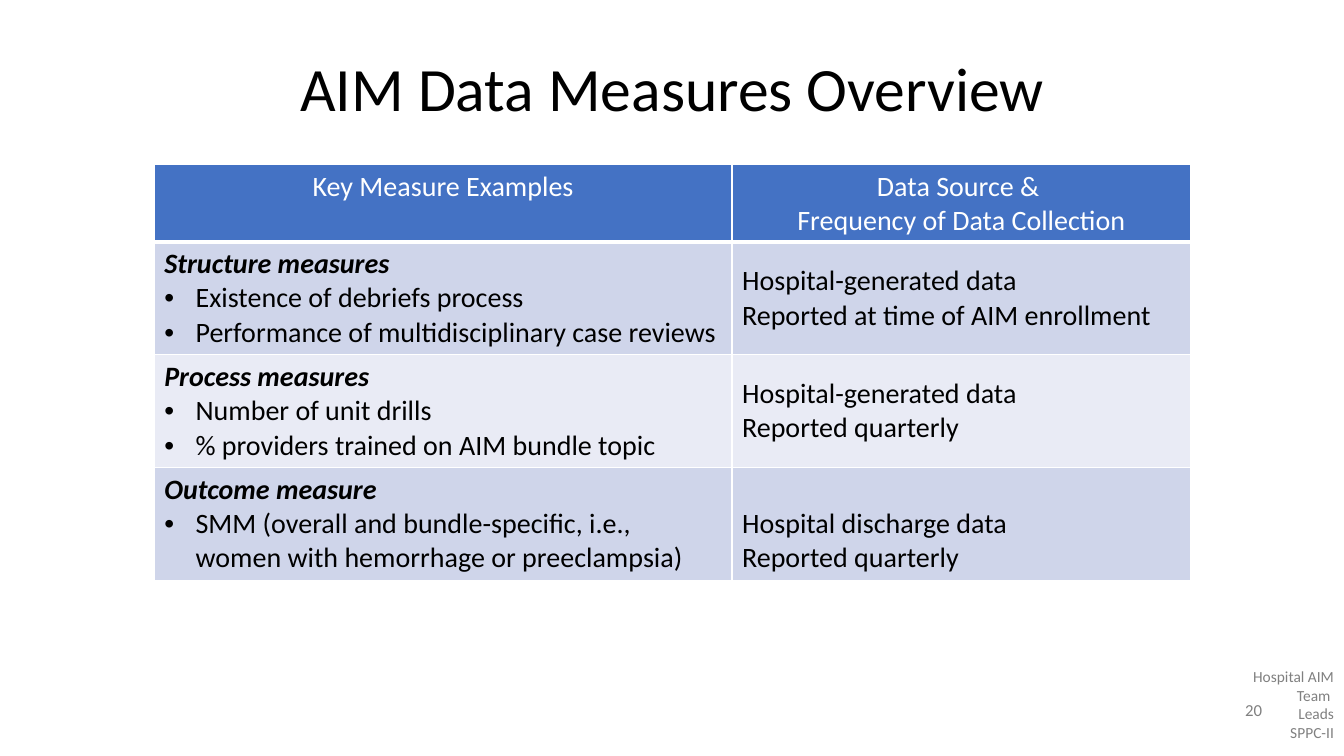
from pptx import Presentation
from pptx.dml.color import RGBColor
from pptx.enum.text import MSO_ANCHOR as Anchor, MSO_AUTO_SIZE as AutoSize, PP_ALIGN as Align
from pptx.oxml import parse_xml
from pptx.oxml.ns import nsdecls
from pptx.util import Inches, Pt

COLORS = {
    "black": "000000", "white": "FFFFFF", "gray": "808080",
    "header": "4472C4", "band_dark": "CFD5EA", "band_light": "E9EBF5",
}
FONT = "Calibri"
TITLE_ONLY = 5

HEADERS = [["Key Measure Examples"], ["Data Source & ", "Frequency of Data Collection"]]
MEASURES = [
    ("Structure measures",
     ["Existence of debriefs process", "Performance of multidisciplinary case reviews"],
     ["Hospital-generated data", "Reported at time of AIM enrollment"], Anchor.MIDDLE),
    ("Process measures",
     ["Number of unit drills", "% providers trained on AIM bundle topic"],
     ["Hospital-generated data", "Reported quarterly"], Anchor.MIDDLE),
    ("Outcome measure",
     ["SMM (overall and bundle-specific, i.e., women with hemorrhage or preeclampsia)"],
     ["Hospital discharge data", "Reported quarterly"], Anchor.BOTTOM),
]


def rgb(name):
    return RGBColor.from_string(COLORS[name])


def add_bullet(paragraph, indent=0.31):
    properties = paragraph._p.get_or_add_pPr()
    properties.set("marL", str(Inches(indent)))
    properties.set("indent", str(-Inches(indent)))
    properties.append(parse_xml(f'<a:buFont {nsdecls("a")} typeface="Arial"/>'))
    properties.append(parse_xml(f'<a:buChar {nsdecls("a")} char="•"/>'))


def write(frame, lines, size=20, color="black", align=Align.LEFT, spacing=None,
          heading=False, bullets=False):
    """Fill a text frame; heading makes line one bold italic, bullets mark the rest."""
    for number, line in enumerate(lines):
        paragraph = frame.paragraphs[0] if number == 0 else frame.add_paragraph()
        paragraph.alignment = align
        if spacing:
            paragraph.line_spacing = spacing
        if bullets and number > 0:
            add_bullet(paragraph)
        run = paragraph.add_run()
        run.text = line
        font = run.font
        font.name, font.size = FONT, Pt(size)
        font.color.rgb = rgb(color)
        font.bold = font.italic = heading and number == 0


def add_borders(cell, top=1, bottom=1):
    properties = cell._tc.get_or_add_tcPr()
    for side, width in {"L": 1, "R": 1, "T": top, "B": bottom}.items():
        properties.append(parse_xml(
            f'<a:ln{side} {nsdecls("a")} w="{Pt(width)}"><a:solidFill>'
            f'<a:srgbClr val="{COLORS["white"]}"/></a:solidFill></a:ln{side}>'))


class SlideBuilder:
    def __init__(self, presentation):
        self.slide = presentation.slides.add_slide(presentation.slide_layouts[TITLE_ONLY])
        background = self.slide.background.fill
        background.solid()
        background.fore_color.rgb = rgb("white")

    def title(self, text, left, top, width, height):
        title = self.slide.shapes.title
        title.left, title.top = Inches(left), Inches(top)
        title.width, title.height = Inches(width), Inches(height)
        title.text_frame.auto_size = AutoSize.NONE
        title.text_frame.vertical_anchor = Anchor.MIDDLE
        write(title.text_frame, [text], size=44, align=Align.CENTER, spacing=0.9)

    def text(self, lines, left, top, width, height, anchor=Anchor.TOP, **style):
        frame = self.slide.shapes.add_textbox(
            Inches(left), Inches(top), Inches(width), Inches(height)).text_frame
        frame.word_wrap = True
        frame.vertical_anchor = anchor
        write(frame, lines, **style)

    def table(self, left, top, widths, heights):
        table = self.slide.shapes.add_table(
            len(heights), len(widths), Inches(left), Inches(top),
            Inches(sum(widths)), Inches(sum(heights))).table
        table.first_row = table.horz_banding = False
        for column, width in zip(table.columns, widths):
            column.width = Inches(width)
        for row, height in zip(table.rows, heights):
            row.height = Inches(height)
        return table

    def cell(self, cell, lines, fill, anchor=Anchor.TOP, top=1, bottom=1, **style):
        add_borders(cell, top, bottom)
        cell.fill.solid()
        cell.fill.fore_color.rgb = rgb(fill)
        cell.vertical_anchor = anchor
        write(cell.text_frame, lines, **style)


def main():
    presentation = Presentation()
    presentation.slide_width, presentation.slide_height = Inches(13.33), Inches(7.5)
    builder = SlideBuilder(presentation)

    builder.text(["Hospital AIM Team ", "Leads", "SPPC-II"], 12.17, 6.57, 1.16, 0.84,
                 size=11, color="gray", align=Align.RIGHT)
    builder.title("AIM Data Measures Overview", 0.92, 0.18, 11.5, 1.45)
    builder.text(["20"], 12.2, 6.84, 0.47, 0.4, anchor=Anchor.MIDDLE,
                 size=12, color="gray", align=Align.CENTER)

    measures = builder.table(1.53, 1.63, [5.73, 4.55], [0.77] + [1.12] * len(MEASURES))
    for column, header in enumerate(HEADERS):
        builder.cell(measures.cell(0, column), header, "header", bottom=3,
                     color="white", align=Align.CENTER)
    for row, (kind, examples, source, anchor) in enumerate(MEASURES, start=1):
        band = "band_dark" if row % 2 else "band_light"
        top = 3 if row == 1 else 1
        builder.cell(measures.cell(row, 0), [kind, *examples], band, top=top,
                     heading=True, bullets=True)
        builder.cell(measures.cell(row, 1), source, band, anchor, top=top)

    presentation.save("out.pptx")


if __name__ == "__main__":
    main()
